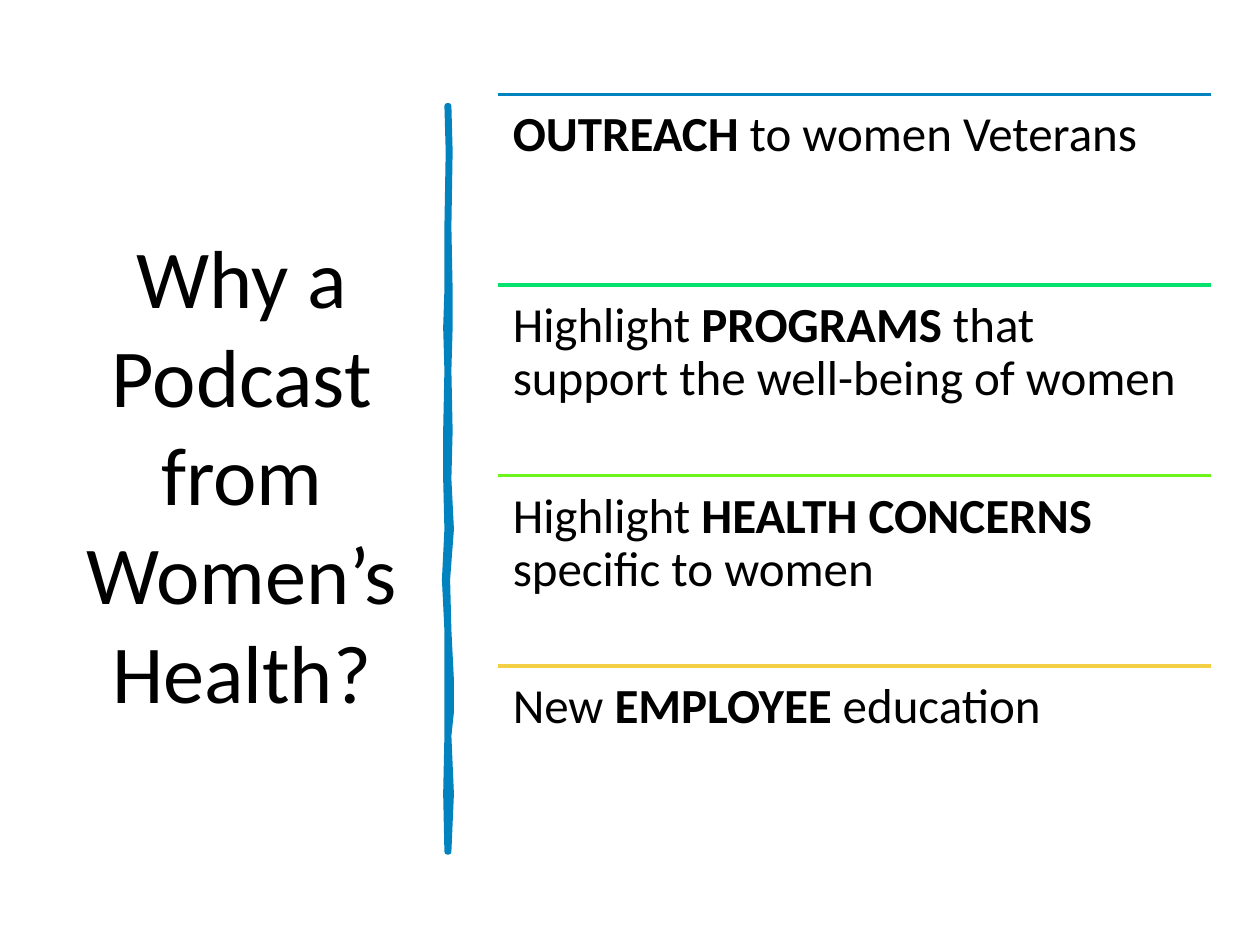
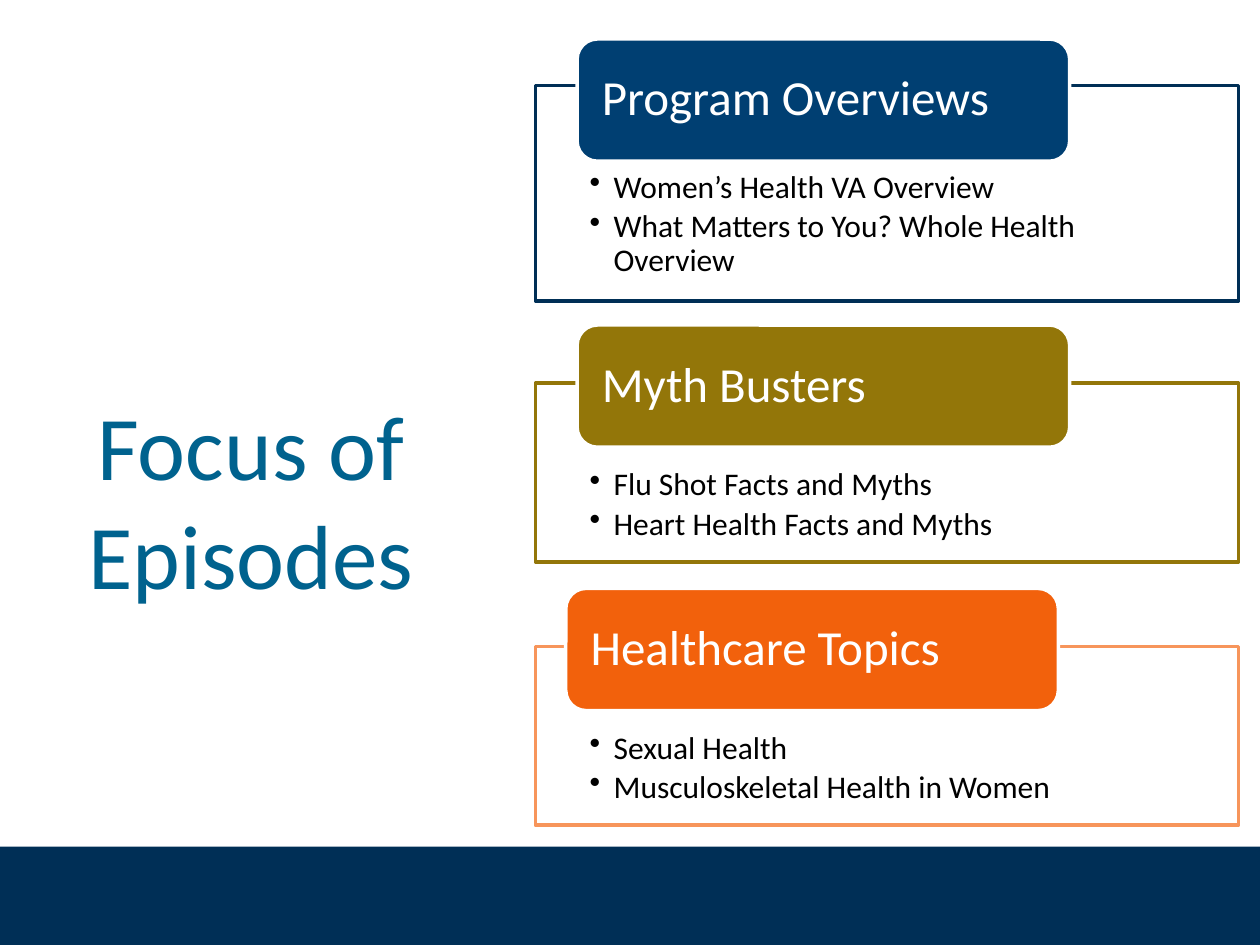
from dataclasses import dataclass

from lxml.etree import SubElement
from pptx import Presentation
from pptx.dml.color import RGBColor
from pptx.enum.shapes import MSO_CONNECTOR as Connector, MSO_SHAPE as Shape
from pptx.enum.text import MSO_ANCHOR as Anchor, MSO_AUTO_SIZE as AutoSize, PP_ALIGN as Align
from pptx.oxml.ns import qn
from pptx.util import Inches, Pt


@dataclass(frozen=True)
class Theme:
    font: str = "Calibri"
    black: str = "000000"
    white: str = "FFFFFF"
    navy: str = "002F56"
    dark_blue: str = "003F72"
    teal: str = "00628E"
    blue: str = "0083BE"
    green: str = "05E26D"
    lime: str = "6BF51A"
    yellow: str = "F3CF45"
    olive: str = "937609"
    orange: str = "F2610C"
    light_orange: str = "F7955B"
    question_size: int = 47
    title_size: int = 52
    heading_size: int = 28
    bullet_size: int = 18
    rule_width: float = 2
    brush_width: float = 3.25


THEME = Theme()
TITLE_ONLY = 5

# Each reason is a list of (text, bold) runs below a coloured rule.
REASONS = [
    (THEME.blue, [("OUTREACH ", True), ("to women Veterans", False)]),
    (THEME.green, [("Highlight ", False), ("PROGRAMS", True),
                   (" that support the well-being of women", False)]),
    (THEME.lime, [("Highlight ", False), ("HEALTH CONCERNS ", True),
                  ("specific to women", False)]),
    (THEME.yellow, [("New ", False), ("EMPLOYEE", True), (" education", False)]),
]

# heading, bullets, fill, frame colour, heading left and top, frame top and height
EPISODES = [
    ("Program Overviews",
     ["Women’s Health VA Overview", "What Matters to You? Whole Health Overview"],
     THEME.dark_blue, THEME.navy, 4.58, 0.31, 0.68, 1.71),
    ("Myth Busters",
     ["Flu Shot Facts and Myths", "Heart Health Facts and Myths"],
     THEME.olive, THEME.olive, 4.58, 2.58, 3.04, 1.42),
    ("Healthcare Topics",
     ["Sexual Health", "Musculoskeletal Health in Women"],
     THEME.orange, THEME.light_orange, 4.49, 4.67, 5.13, 1.42),
]

# y, left edge and right edge of the brush stroke
BRUSH_EDGES = [
    (0.84, 3.55, 3.56), (1.2, 3.56, 3.57), (1.8, 3.55, 3.56), (2.3, 3.55, 3.57),
    (2.6, 3.54, 3.57), (2.94, 3.55, 3.56), (3.42, 3.54, 3.57), (3.8, 3.54, 3.56),
    (4.2, 3.55, 3.58), (4.6, 3.53, 3.55), (5, 3.55, 3.56), (5.4, 3.55, 3.58),
    (5.65, 3.55, 3.58), (5.84, 3.55, 3.56), (6.3, 3.54, 3.58), (6.76, 3.55, 3.56),
]


def rgb(color):
    return RGBColor.from_string(color)


def style_paragraph(paragraph, size, color, align=Align.LEFT, spacing=None):
    paragraph.alignment = align
    paragraph.line_spacing = spacing
    paragraph.font.name = THEME.font
    paragraph.font.size = Pt(size)
    paragraph.font.color.rgb = rgb(color)


def set_frame(frame, insets, anchor=Anchor.TOP):
    """Wrap the text and set the left, top, right and bottom insets."""
    frame.word_wrap = True
    frame.auto_size = AutoSize.NONE
    frame.vertical_anchor = anchor
    frame.margin_left, frame.margin_top, frame.margin_right, frame.margin_bottom = map(Inches, insets)


def add_titled_slide(presentation, text, box, size, color):
    slide = presentation.slides.add_slide(presentation.slide_layouts[TITLE_ONLY])
    title = slide.shapes.title
    title.left, title.top, title.width, title.height = map(Inches, box)
    title.text_frame.text = text
    set_frame(title.text_frame, (0.1, 0.05, 0.1, 0.05), Anchor.MIDDLE)
    style_paragraph(title.text_frame.paragraphs[0], size, color, Align.CENTER)
    return slide


def add_box(slide, kind, box, fill, line=None):
    shape = slide.shapes.add_shape(kind, *map(Inches, box))
    shape.shadow.inherit = False
    shape.fill.solid()
    shape.fill.fore_color.rgb = rgb(fill)
    if line:
        shape.line.color.rgb = rgb(line)
        shape.line.width = Pt(THEME.rule_width)
    else:
        shape.line.fill.background()
    return shape


def add_rule(slide, left, top, width, color):
    rule = slide.shapes.add_connector(
        Connector.STRAIGHT, *map(Inches, (left, top, left + width, top)))
    rule.line.color.rgb = rgb(color)
    rule.line.width = Pt(THEME.rule_width)
    SubElement(rule._element.spPr, qn("a:effectLst"))


def add_brush_stroke(slide):
    left_side = [(left, y) for y, left, _ in BRUSH_EDGES]
    right_side = [(right, y) for y, _, right in reversed(BRUSH_EDGES)]
    outline = [(Inches(x), Inches(y)) for x, y in left_side + right_side]
    builder = slide.shapes.build_freeform(*outline[0])
    builder.add_line_segments(outline[1:], close=True)
    stroke = builder.convert_to_shape()
    stroke.shadow.inherit = False
    stroke.fill.solid()
    stroke.fill.fore_color.rgb = rgb(THEME.blue)
    stroke.line.color.rgb = rgb(THEME.blue)
    stroke.line.width = Pt(THEME.brush_width)


def add_reason(slide, left, top, width, height, color, runs):
    add_rule(slide, left, top, width, color)
    box = slide.shapes.add_textbox(*map(Inches, (left, top, width, height)))
    set_frame(box.text_frame, (0.12,) * 4)
    paragraph = box.text_frame.paragraphs[0]
    for text, bold in runs:
        run = paragraph.add_run()
        run.text = text
        run.font.bold = bold
    style_paragraph(paragraph, THEME.heading_size, THEME.black, spacing=0.9)


def add_bullet(paragraph, indent):
    properties = paragraph._p.get_or_add_pPr()
    properties.set("marL", str(Inches(indent)))
    properties.set("indent", str(-Inches(indent)))
    SubElement(properties, qn("a:buChar")).set("char", "•")


def add_episode_group(slide, heading, bullets, fill, line, left, top, frame_top, frame_height):
    """Draw a framed bullet list with a heading tab over its upper edge."""
    frame = add_box(slide, Shape.RECTANGLE, (4.25, frame_top, 5.58, frame_height), THEME.white, line)
    text_frame = frame.text_frame
    set_frame(text_frame, (0.43, 0.68, 0.43, 0.14))
    text_frame.text = "\n".join(bullets)
    for paragraph in text_frame.paragraphs:
        add_bullet(paragraph, 0.19)
        style_paragraph(paragraph, THEME.bullet_size, THEME.black, spacing=0.9)
        paragraph.space_after = Pt(3)

    tab = add_box(slide, Shape.ROUNDED_RECTANGLE, (left, top, 3.91, 0.97), fill, THEME.white)
    set_frame(tab.text_frame, (0.15, 0, 0.15, 0), Anchor.MIDDLE)
    tab.text_frame.text = heading
    style_paragraph(tab.text_frame.paragraphs[0], THEME.heading_size, THEME.white, spacing=0.9)


def build_reasons_slide(presentation):
    slide = add_titled_slide(presentation, "Why a Podcast from Women’s Health?",
                             (0.52, 0.7, 2.8, 6.11), THEME.question_size, THEME.black)
    add_brush_stroke(slide)
    top, row_height = 0.75, 6.05 / len(REASONS)
    for index, (color, runs) in enumerate(REASONS):
        add_reason(slide, 3.95, top + index * row_height, 5.66, row_height, color, runs)


def build_episodes_slide(presentation):
    slide = add_titled_slide(presentation, "Focus of Episodes",
                             (0.43, 1.92, 3.12, 4.08), THEME.title_size, THEME.teal)
    add_box(slide, Shape.RECTANGLE, (0, 6.72, 10, 0.78), THEME.navy)
    for episode in EPISODES:
        add_episode_group(slide, *episode)


def main():
    presentation = Presentation()
    presentation.slide_width, presentation.slide_height = Inches(10), Inches(7.5)
    build_reasons_slide(presentation)
    build_episodes_slide(presentation)
    presentation.save("out.pptx")


if __name__ == "__main__":
    main()
